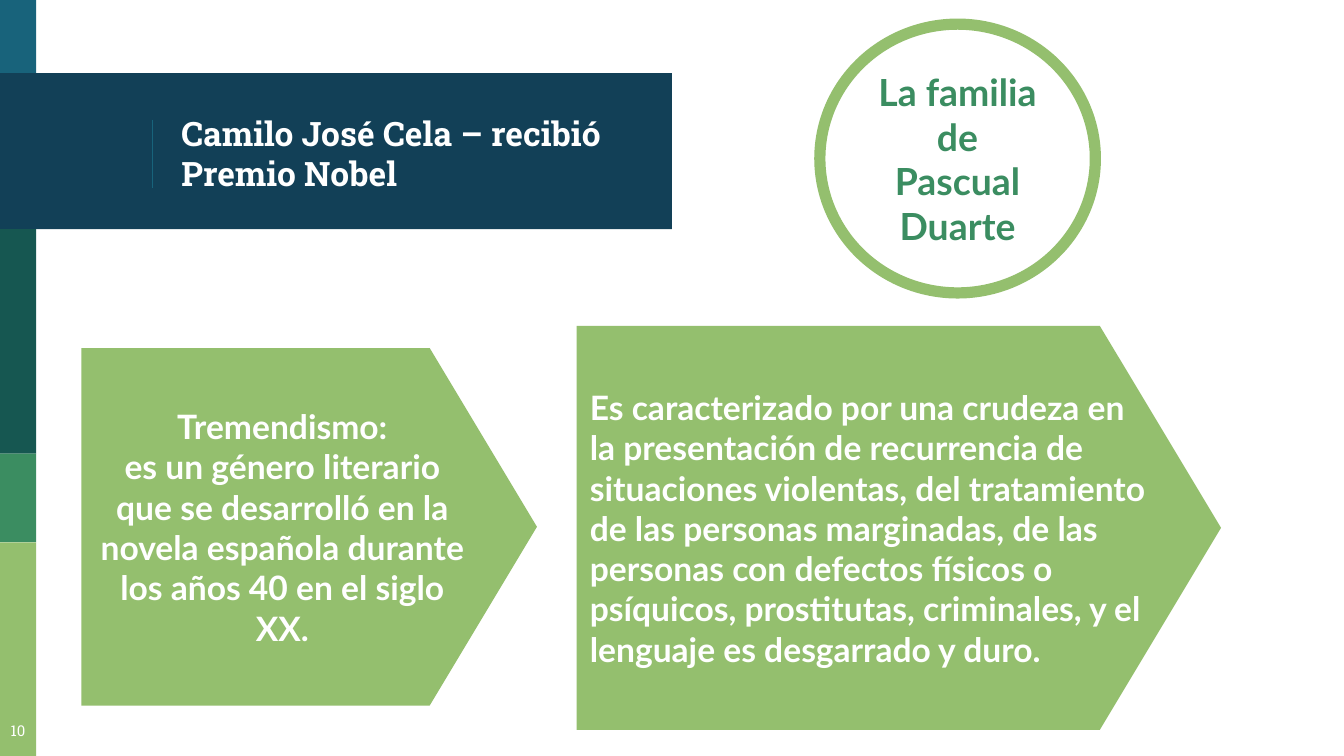
from itertools import pairwise
from lxml.etree import SubElement
from pptx import Presentation
from pptx.dml.color import RGBColor as Rgb
from pptx.enum.shapes import MSO_CONNECTOR as Link, MSO_SHAPE as Kind
from pptx.enum.text import MSO_ANCHOR as Anchor, MSO_AUTO_SIZE as Fit, PP_ALIGN as Align
from pptx.oxml.ns import qn
from pptx.util import Inches, Pt

COLS, ROWS = 100, 56.25
CELL = Inches(0.1)
EDGE = 2.7
HUES = {
    "blue": "18637B",
    "navy": "124057",
    "pine": "165751",
    "leaf": "3B8D61",
    "lime": "94BF6E",
    "white": "FFFFFF",
}


def hue(name):
    return Rgb.from_string(HUES[name])


def grid(*cells):
    return [round(c * CELL) for c in cells]


def write(shape, lines, size, tint="white", font="Lato", bold=True,
          align=Align.CENTER, anchor=Anchor.MIDDLE):
    frame = shape.text_frame
    frame.word_wrap = True
    frame.auto_size = Fit.NONE
    frame.vertical_anchor = anchor
    frame.margin_left = frame.margin_right = CELL
    frame.margin_top = frame.margin_bottom = CELL
    for i, line in enumerate(lines):
        para = frame.add_paragraph() if i else frame.paragraphs[0]
        para.alignment = align
        run = para.add_run()
        run.text = line
        run.font.name = font
        run.font.size = Pt(size)
        run.font.bold = bold
        run.font.color.rgb = hue(tint)


def block(slide, kind, cells, fill=None, line=None, width=6):
    shape = slide.shapes.add_shape(kind, *grid(*cells))
    shape.shadow.inherit = False
    if fill:
        shape.fill.solid()
        shape.fill.fore_color.rgb = hue(fill)
    else:
        shape.fill.background()
    if line:
        shape.line.color.rgb = hue(line)
        shape.line.width = Pt(width)
    else:
        shape.line.fill.background()
    return shape


def arrow(slide, cells, lines, align):
    shape = block(slide, Kind.PENTAGON, cells, "lime")
    shape.adjustments[0] = 0.3
    write(shape, lines, 18, align=align)


def rule(slide, *ends):
    line = slide.shapes.add_connector(Link.STRAIGHT, *grid(*ends))
    line.line.color.rgb = hue("blue")
    line.line.width = Pt(0.75)
    SubElement(line._element.spPr, qn("a:effectLst"))


def side(slide):
    tops = [0, 5.45, 17.05, 33.75, 40.35, ROWS]
    tints = ["blue", "navy", "pine", "leaf", "lime"]
    for (top, end), tint in zip(pairwise(tops), tints):
        wide = COLS / 2 if tint == "navy" else EDGE
        block(slide, Kind.RECTANGLE, (0, top, wide, end - top), tint)


def title(slide, cells, text):
    shape = slide.shapes.title
    slide.shapes._spTree.append(shape._element)
    shape.left, shape.top, shape.width, shape.height = grid(*cells)
    write(shape, [text], 18, font="Roboto Slab", align=Align.LEFT)


def number(slide, cells, text):
    box = slide.shapes.add_textbox(*grid(*cells))
    write(box, [text], 8, font="Roboto Slab", bold=False, anchor=Anchor.TOP)


def main():
    deck = Presentation()
    deck.slide_width, deck.slide_height = grid(COLS, ROWS)
    slide = deck.slides.add_slide(deck.slide_layouts[5])

    side(slide)
    rule(slide, 11.35, 8.9, 11.35, 14)
    title(slide, (12.5, 5.8, 35.1, 11.2), "Camilo José Cela – recibió Premio Nobel")
    arrow(slide, (6.05, 25.9, 33.9, 26.6), [
        "Tremendismo:",
        "es un género literario que se desarrolló en la novela española "
        "durante los años 40 en el siglo XX.",
    ], Align.CENTER)
    number(slide, (-0.55, 52.7, 3.8, 3.5), "10")
    ring = block(slide, Kind.OVAL, (61, 1.8, 20.5, 20), line="lime")
    write(ring, ["La familia de Pascual Duarte"], 20, "leaf")
    arrow(slide, (42.9, 24.25, 47.95, 30.05), [
        "Es caracterizado por una crudeza en la presentación de recurrencia de "
        "situaciones violentas, del tratamiento de las personas marginadas, "
        "de las personas con defectos físicos o psíquicos, prostitutas, "
        "criminales, y el lenguaje es desgarrado y duro.",
    ], Align.LEFT)

    deck.save("out.pptx")


if __name__ == "__main__":
    main()
